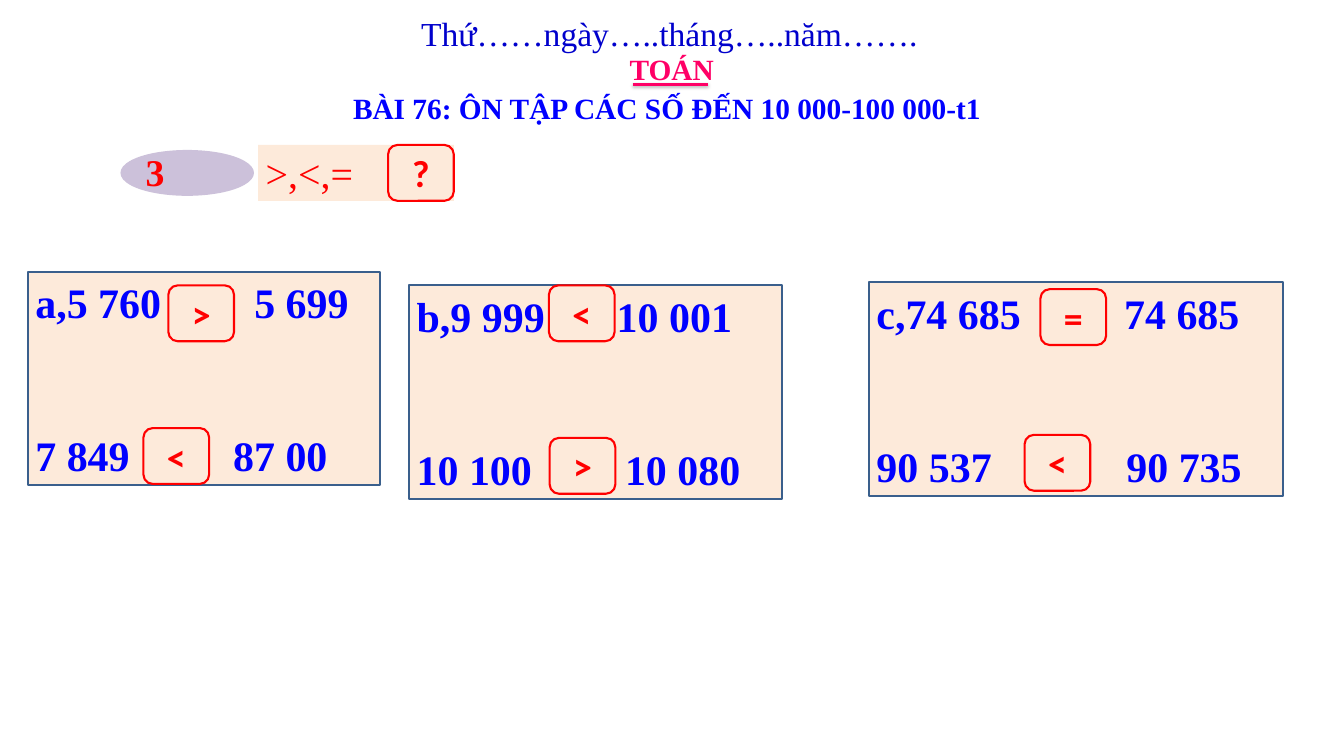
from lxml.etree import SubElement
from pptx import Presentation
from pptx.dml.color import RGBColor
from pptx.enum.shapes import MSO_CONNECTOR, MSO_SHAPE
from pptx.enum.text import MSO_ANCHOR, PP_ALIGN
from pptx.oxml.ns import qn
from pptx.util import Inches, Pt

THEME = {
    "serif": "Times New Roman", "sans": "Calibri",
    "blue": "0000FF", "navy": "0000CC", "pink": "FF0066", "red": "FF0000",
    "peach": "FDEADA", "lilac": "CCC1DA", "border": "3A5F8C", "shadow": "000000",
    "title": 28, "date": 32, "sign": 36, "prompt": 38, "sum": 40,
    "line": 2, "row_gap": 98,
}
DATE = "Thứ……ngày…..tháng…..năm……."
SUBJECT = "TOÁN"
LESSON = "BÀI 76: ÔN TẬP CÁC SỐ ĐẾN 10 000-100 000-t1"
EXERCISE = "3"
PROMPT = ">,<,="
PANEL_HEIGHT = 2.83
SIGN_SIZE = (0.87, 0.74)
PANELS = [
    {"left": 0.37, "top": 3.6, "width": 4.66, "tabs": [2.9, 2.62],
     "rows": ["a,5 760\t5 699", "7 849\t87 00"]},
    {"left": 5.42, "top": 3.78, "width": 4.94, "tabs": [2.65, 2.76],
     "rows": ["b,9 999\t10 001", "10 100\t10 080"]},
    {"left": 11.51, "top": 3.74, "width": 5.48, "tabs": [3.28, 3.31],
     "rows": ["c,74 685\t74 685", "90 537\t90 735"]},
]
SIGNS = [
    ("?", 5.14, 1.92),
    (">", 2.23, 3.78), ("<", 1.9, 5.67),
    ("<", 7.27, 3.78), (">", 7.28, 5.8),
    ("=", 13.78, 3.83), ("<", 13.57, 5.76),
]


def color(name):
    return RGBColor.from_string(THEME[name])


def write(shape, *lines, size, ink, font="serif", bold=True, align=PP_ALIGN.LEFT,
          anchor=MSO_ANCHOR.TOP, wrap=True, tabs=(), gap=0):
    frame = shape.text_frame
    frame.word_wrap = wrap
    frame.vertical_anchor = anchor
    for index, line in enumerate(lines):
        paragraph = frame.add_paragraph() if index else frame.paragraphs[0]
        if tabs:
            tab_list = SubElement(paragraph._p.get_or_add_pPr(), qn("a:tabLst"))
            SubElement(tab_list, qn("a:tab"), pos=str(Inches(tabs[index])), algn="l")
        if index:
            paragraph.space_before = Pt(gap)
        paragraph.alignment = align
        run = paragraph.add_run()
        run.text = line
        run.font.name = THEME[font]
        run.font.size = Pt(THEME[size])
        run.font.bold = bold
        run.font.color.rgb = color(ink)


def add_box(slide, kind, left, top, width, height, fill, line=None):
    shape = slide.shapes.add_shape(
        kind, Inches(left), Inches(top), Inches(width), Inches(height))
    shape.shadow.inherit = False
    shape.fill.solid()
    shape.fill.fore_color.rgb = color(fill)
    if line:
        shape.line.color.rgb = color(line)
        shape.line.width = Pt(THEME["line"])
    else:
        shape.line.fill.background()
    return shape


def add_text(slide, text, left, top, width, height, **style):
    shape = slide.shapes.add_textbox(
        Inches(left), Inches(top), Inches(width), Inches(height))
    write(shape, text, **style)
    return shape


def add_underline(slide, left, right, top):
    line = slide.shapes.add_connector(
        MSO_CONNECTOR.STRAIGHT, Inches(left), Inches(top), Inches(right), Inches(top))
    line.line.color.rgb = color("pink")
    line.line.width = Pt(THEME["line"])
    effects = SubElement(line._element.spPr, qn("a:effectLst"))
    shadow = SubElement(effects, qn("a:outerShdw"), blurRad=str(Pt(3.1)),
                        dist=str(Pt(1.6)), dir="5400000", rotWithShape="0")
    tint = SubElement(shadow, qn("a:srgbClr"), val=THEME["shadow"])
    SubElement(tint, qn("a:alpha"), val="38000")


def add_heading(slide):
    add_text(slide, DATE, 5.48, 0.12, 6.84, 0.64,
             size="date", ink="navy", bold=False, wrap=False)
    add_text(slide, SUBJECT, 8.24, 0.63, 1.33, 0.57, size="title", ink="pink", wrap=False)
    add_underline(slide, 8.38, 9.38, 1.12)
    lesson = add_text(slide, LESSON, 2.37, 1.12, 12.92, 0.63,
                      size="title", ink="blue", align=PP_ALIGN.CENTER)
    frame = lesson.text_frame
    frame.margin_left = frame.margin_right = Inches(0.16)
    frame.margin_top = frame.margin_bottom = Inches(0.08)


def add_exercise(slide):
    add_box(slide, MSO_SHAPE.OVAL, 1.61, 2, 1.74, 0.58, "lilac", "lilac")
    add_text(slide, EXERCISE, 1.83, 1.92, 1.36, 0.71, size="sign", ink="red")
    prompt = add_box(slide, MSO_SHAPE.RECTANGLE, 3.42, 1.92, 2.59, 0.74, "peach")
    write(prompt, PROMPT, size="prompt", ink="red", bold=False)


def main():
    """Build the number comparison exercise slide."""
    presentation = Presentation()
    presentation.slide_width = Inches(17.8)
    presentation.slide_height = Inches(10)
    slide = presentation.slides.add_slide(presentation.slide_layouts[6])
    add_heading(slide)
    add_exercise(slide)
    for panel in PANELS:
        shape = add_box(slide, MSO_SHAPE.RECTANGLE, panel["left"], panel["top"],
                        panel["width"], PANEL_HEIGHT, "peach", "border")
        write(shape, *panel["rows"], size="sum", ink="blue", anchor=MSO_ANCHOR.MIDDLE,
              tabs=panel["tabs"], gap=THEME["row_gap"])
    for sign, left, top in SIGNS:
        shape = add_box(slide, MSO_SHAPE.ROUNDED_RECTANGLE, left, top, *SIGN_SIZE,
                        "peach", "red")
        write(shape, sign, size="sign", ink="red", font="sans",
              align=PP_ALIGN.CENTER, anchor=MSO_ANCHOR.MIDDLE)
    presentation.save("out.pptx")


if __name__ == "__main__":
    main()
